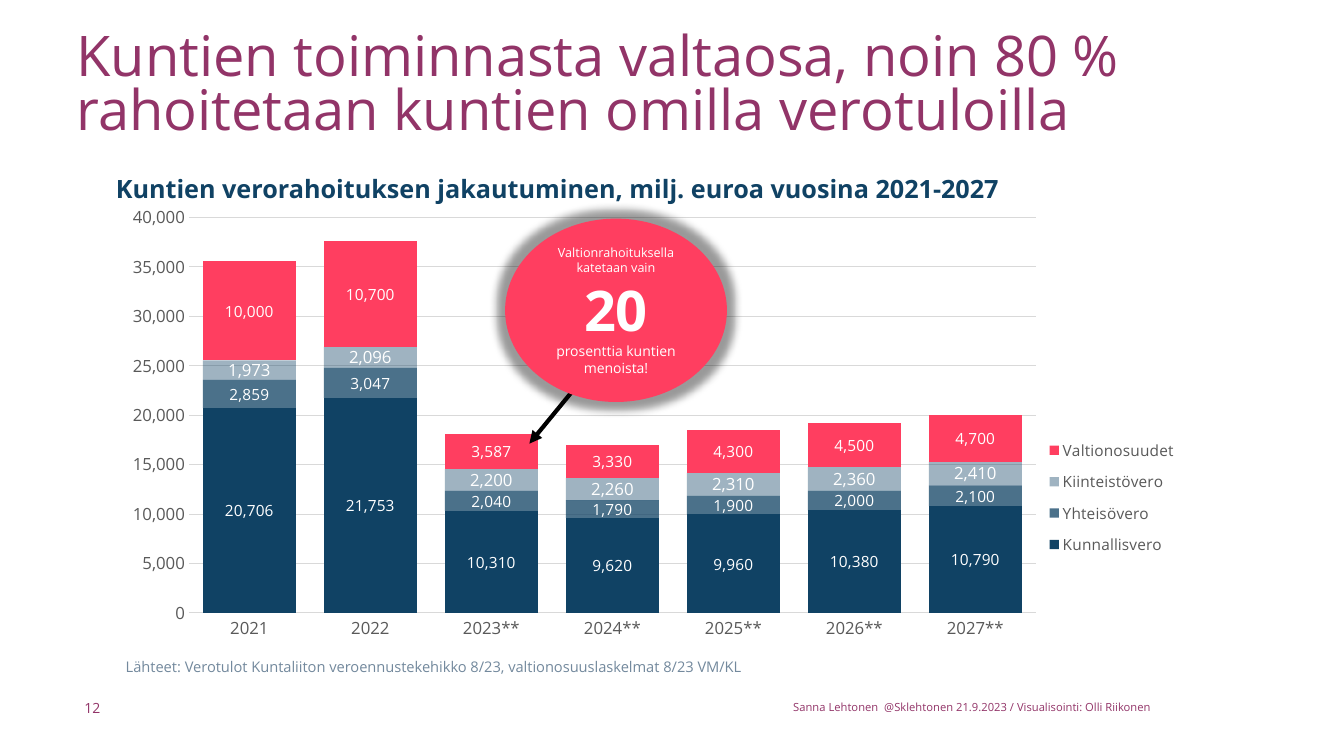
from dataclasses import dataclass

from lxml import etree
from pptx import Presentation
from pptx.chart.data import CategoryChartData
from pptx.dml.color import RGBColor
from pptx.enum.chart import XL_CHART_TYPE, XL_LEGEND_POSITION, XL_TICK_MARK
from pptx.enum.shapes import MSO_CONNECTOR, MSO_SHAPE
from pptx.enum.text import MSO_ANCHOR, PP_ALIGN
from pptx.oxml import parse_xml
from pptx.oxml.ns import nsdecls, qn
from pptx.util import Cm, Pt

STACKED = XL_CHART_TYPE.COLUMN_STACKED
LEGEND_RIGHT = XL_LEGEND_POSITION.RIGHT
NO_TICK = XL_TICK_MARK.NONE
STRAIGHT = MSO_CONNECTOR.STRAIGHT
ELLIPSE = MSO_SHAPE.OVAL
TOP, MIDDLE = MSO_ANCHOR.TOP, MSO_ANCHOR.MIDDLE
CENTER = PP_ALIGN.CENTER

PLUM = RGBColor(0x92, 0x34, 0x68)
NAVY = RGBColor(0x10, 0x42, 0x64)
CORAL = RGBColor(0xFF, 0x3E, 0x60)
SLATE = RGBColor(0x73, 0x89, 0x9D)
GREY = RGBColor(0x59, 0x59, 0x59)
PALE = RGBColor(0xD9, 0xD9, 0xD9)
WHITE = RGBColor(0xFF, 0xFF, 0xFF)
BLACK = RGBColor(0, 0, 0)
FONT = "Open Sans"
NUMBER = "#,##0"


@dataclass
class Label:
    text: str
    left: float
    top: float
    width: float
    height: float
    size: float
    color: RGBColor
    bold: bool = False
    inset: bool = True
    wrap: bool = True
    anchor: MSO_ANCHOR = TOP
    spacing: float = 1.0


@dataclass
class Tax:
    name: str
    values: tuple
    color: RGBColor
    opacity: int = 100
    label_size: int = 11


@dataclass
class CalloutLine:
    text: str
    size: int
    bold: bool = False


LABELS = [
    Label("Kuntien toiminnasta valtaosa, noin 80 % rahoitetaan kuntien omilla verotuloilla",
          1.93, 0.85, 30.6, 3.4, 40, PLUM, inset=False, spacing=0.8),
    Label("Kuntien verorahoituksen jakautuminen, milj. euroa vuosina 2021-2027",
          2.67, 4.24, 24.46, 1.1, 18, NAVY, bold=True),
    Label("12", 2.13, 17.53, 1.2, 0.6, 10, PLUM, inset=False, anchor=MIDDLE),
    Label("Sanna Lehtonen  @Sklehtonen 21.9.2023 / Visualisointi: Olli Riikonen",
          19.74, 17.53, 10.18, 0.6, 8, PLUM, wrap=False),
    Label("Lähteet: Verotulot Kuntaliiton veroennustekehikko 8/23, valtionosuuslaskelmat 8/23 VM/KL",
          2.92, 16.46, 17.48, 0.74, 10.5, SLATE),
]
YEARS = ["2021", "2022", "2023**", "2024**", "2025**", "2026**", "2027**"]
TAXES = [
    Tax("Kunnallisvero", (20706, 21753, 10310, 9620, 9960, 10380, 10790), NAVY),
    Tax("Yhteisövero", (2859, 3047, 2040, 1790, 1900, 2000, 2100), NAVY, 75),
    Tax("Kiinteistövero", (1973, 2096, 2200, 2260, 2310, 2360, 2410), NAVY, 40, 12),
    Tax("Valtionosuudet", (10000, 10700, 3587, 3330, 4300, 4500, 4700), CORAL),
]
CALLOUT = [
    CalloutLine("Valtionrahoituksella katetaan vain", 9),
    CalloutLine("20", 40, True),
    CalloutLine("prosenttia kuntien menoista!", 10),
]


def style_font(font, size: float, color: RGBColor, bold: bool = False) -> None:
    font.name = FONT
    font.size = Pt(size)
    font.color.rgb = color
    font.bold = bold


def add_label(page, label: Label) -> None:
    box = page.shapes.add_textbox(Cm(label.left), Cm(label.top), Cm(label.width), Cm(label.height))
    frame = box.text_frame
    frame.word_wrap = label.wrap
    frame.vertical_anchor = label.anchor
    if not label.inset:
        frame.margin_left = frame.margin_right = frame.margin_top = frame.margin_bottom = 0
    para = frame.paragraphs[0]
    para.line_spacing = label.spacing
    span = para.add_run()
    span.text = label.text
    style_font(span.font, label.size, label.color, label.bold)


def manual_layout(x: float, y: float, width: float, height: float, inner: bool = False):
    target = '<c:layoutTarget val="inner"/>' if inner else ""
    return parse_xml(
        f'<c:layout {nsdecls("c")}><c:manualLayout>{target}'
        f'<c:xMode val="edge"/><c:yMode val="edge"/><c:x val="{x}"/><c:y val="{y}"/>'
        f'<c:w val="{width}"/><c:h val="{height}"/></c:manualLayout></c:layout>')


def style_series(series, tax: Tax) -> None:
    series.format.fill.solid()
    series.format.fill.fore_color.rgb = tax.color
    if tax.opacity < 100:
        color = next(series.format.fill._xPr.iter(qn("a:srgbClr")))
        etree.SubElement(color, qn("a:alpha")).set("val", str(tax.opacity * 1000))
    labels = series.data_labels
    labels.show_value = True
    labels.number_format = NUMBER
    labels.number_format_is_linked = False
    style_font(labels.font, tax.label_size, WHITE)


def add_tax_chart(page) -> None:
    data = CategoryChartData(number_format=NUMBER)
    data.categories = YEARS
    for tax in TAXES:
        data.add_series(tax.name, tax.values)
    chart = page.shapes.add_chart(STACKED, Cm(2.74), Cm(5.08), Cm(27.33), Cm(11.05), data).chart
    chart.has_title = False
    style_font(chart.font, 12, BLACK)
    plot = chart.plots[0]
    plot.gap_width = 30
    plot.overlap = 100
    plot.vary_by_categories = False
    for series, tax in zip(plot.series, TAXES):
        style_series(series, tax)

    for axis in (chart.category_axis, chart.value_axis):
        axis.major_tick_mark = axis.minor_tick_mark = NO_TICK
        style_font(axis.tick_labels.font, 12, GREY)
    values = chart.value_axis
    values.minimum_scale, values.maximum_scale, values.major_unit = 0, 40000, 5000
    values.tick_labels.number_format = NUMBER
    values.tick_labels.number_format_is_linked = False
    values.format.line.fill.background()
    for line in (chart.category_axis.format.line, values.major_gridlines.format.line):
        line.color.rgb = PALE
        line.width = Pt(0.75)

    chart.has_legend = True
    legend = chart.legend
    legend.position = LEGEND_RIGHT
    legend.include_in_layout = False
    style_font(legend.font, 11, GREY)
    legend_xml = legend._element
    for old in legend_xml.findall(qn("c:layout")):
        legend_xml.remove(old)
    legend_xml.find(qn("c:legendPos")).addnext(manual_layout(0.86, 0.52, 0.13, 0.31))
    area = chart._chartSpace.chart.plotArea
    for old in area.findall(qn("c:layout")):
        area.remove(old)
    area.insert(0, manual_layout(0.074, 0.036, 0.781, 0.903, inner=True))


def add_arrow(page) -> None:
    arrow = page.shapes.add_connector(STRAIGHT, Cm(14.53), Cm(9.73), Cm(13.34), Cm(11.18))
    arrow.line.color.rgb = BLACK
    arrow.line.width = Pt(3)
    etree.SubElement(arrow.line._get_or_add_ln(), qn("a:tailEnd")).set("type", "triangle")
    etree.SubElement(arrow._element.spPr, qn("a:effectLst"))


def add_callout(page) -> None:
    bubble = page.shapes.add_shape(ELLIPSE, Cm(12.73), Cm(5.51), Cm(5.59), Cm(4.62))
    bubble.fill.solid()
    bubble.fill.fore_color.rgb = CORAL
    bubble.line.fill.background()
    bubble.shadow.inherit = False
    effects = bubble._element.spPr.find(qn("a:effectLst"))
    effects.append(parse_xml(
        f'<a:glow {nsdecls("a")} rad="{Pt(12)}"><a:srgbClr val="{BLACK}">'
        '<a:alpha val="40000"/></a:srgbClr></a:glow>'))
    frame = bubble.text_frame
    frame.word_wrap = True
    frame.vertical_anchor = MIDDLE
    for index, line in enumerate(CALLOUT):
        para = frame.add_paragraph() if index else frame.paragraphs[0]
        para.alignment = CENTER
        span = para.add_run()
        span.text = line.text
        style_font(span.font, line.size, WHITE, line.bold)


def main() -> None:
    deck = Presentation()
    deck.slide_width, deck.slide_height = Cm(33.87), Cm(19.05)
    page = deck.slides.add_slide(deck.slide_layouts[6])
    for label in LABELS:
        add_label(page, label)
    add_tax_chart(page)
    add_arrow(page)
    add_callout(page)
    deck.save("out.pptx")


if __name__ == "__main__":
    main()
